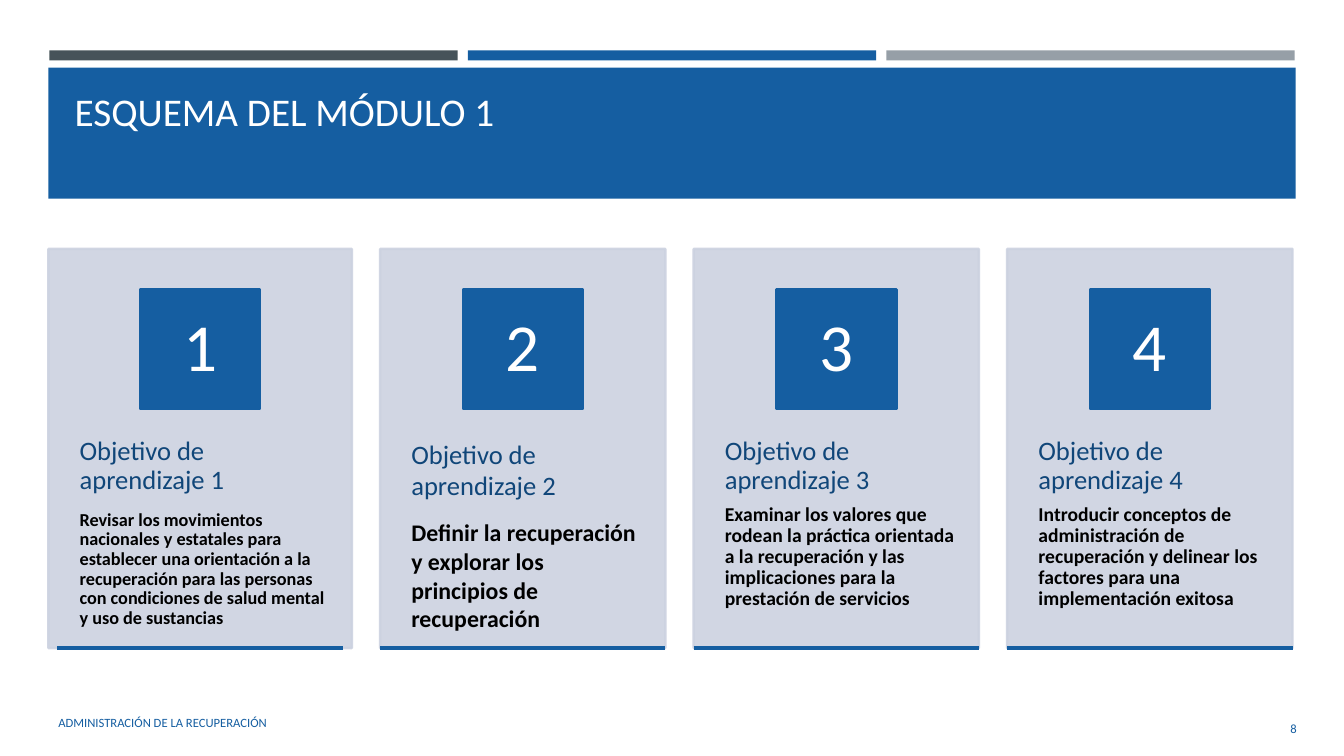
from lxml import etree
from pptx import Presentation
from pptx.dml.color import RGBColor
from pptx.enum.shapes import MSO_CONNECTOR, MSO_SHAPE
from pptx.enum.text import MSO_ANCHOR, MSO_AUTO_SIZE, PP_ALIGN
from pptx.oxml.ns import qn
from pptx.util import Inches, Pt

RECT = MSO_SHAPE.RECTANGLE
STRAIGHT = MSO_CONNECTOR.STRAIGHT
TOP, MIDDLE = MSO_ANCHOR.TOP, MSO_ANCHOR.MIDDLE
LEFT, CENTER, RIGHT = PP_ALIGN.LEFT, PP_ALIGN.CENTER, PP_ALIGN.RIGHT
NO_FIT = MSO_AUTO_SIZE.NONE

BLUE = RGBColor(0x15, 0x5E, 0xA1)
NAVY = RGBColor(0x10, 0x46, 0x79)
SLATE = RGBColor(0x46, 0x53, 0x59)
GRAY = RGBColor(0x96, 0x9F, 0xA7)
PALE = RGBColor(0xCC, 0xD2, 0xE0)
WHITE = RGBColor(0xFF, 0xFF, 0xFF)
BLACK = RGBColor(0, 0, 0)

FONT = "Calibri"
BORDER = Pt(1.75)
CARD_TOP, CARD_HEIGHT = 2.47, 3.96
CARD_WIDTH, CARD_PITCH = 2.83, 3.11
BADGE_SIZE = 1.19

OBJECTIVES = [
    dict(goal="Revisar los movimientos nacionales y estatales para establecer "
              "una orientación a la recuperación para las personas con "
              "condiciones de salud mental y uso de sustancias",
         size=13, spacing=0.9, gap=11),
    dict(goal="Definir la recuperación y explorar los principios de "
              "recuperación",
         size=17, spacing=1.0, gap=12),
    dict(goal="Examinar los valores que rodean la práctica orientada a la "
              "recuperación y las implicaciones para la prestación de servicios",
         size=14, spacing=0.9, gap=6.7),
    dict(goal="Introducir conceptos de administración de recuperación y "
              "delinear los factores para una implementación exitosa",
         size=14, spacing=0.9, gap=6.7),
]


def write(paragraph, text, size, color, bold=False, align=LEFT, spacing=1.0,
          before=0):
    paragraph.alignment = align
    paragraph.line_spacing = spacing
    paragraph.space_before = Pt(before)
    paragraph.space_after = Pt(0)
    run = paragraph.add_run()
    run.text = text
    run.font.name = FONT
    run.font.size = Pt(size)
    run.font.bold = bold
    run.font.color.rgb = color


def set_frame(frame, anchor, margins=(0.1, 0.05, 0.1, 0.05)):
    frame.word_wrap = True
    frame.auto_size = NO_FIT
    frame.vertical_anchor = anchor
    (frame.margin_left, frame.margin_top,
     frame.margin_right, frame.margin_bottom) = map(Inches, margins)
    return frame


def add_frame(slide, box, anchor, **options):
    label = slide.shapes.add_textbox(*map(Inches, box))
    return set_frame(label.text_frame, anchor, **options)


def add_rect(slide, box, color, outlined=False):
    rect = slide.shapes.add_shape(RECT, *map(Inches, box))
    rect.shadow.inherit = False
    rect.fill.solid()
    rect.fill.fore_color.rgb = color
    if outlined:
        rect.line.color.rgb = color
        rect.line.width = BORDER
    else:
        rect.line.fill.background()
    return rect


def add_header(slide, left, top, width):
    bar_width, bar_pitch = 4.05, 4.15
    for index, color in enumerate((SLATE, BLUE, GRAY)):
        add_rect(slide, (left + 0.01 + index * bar_pitch, top, bar_width, 0.1),
                 color)
    add_rect(slide, (left, top + 0.17, width, 1.3), BLUE)

    title = slide.shapes.title
    title.left, title.top = Inches(left + 0.16), Inches(top + 0.27)
    title.width, title.height = Inches(width - 0.31), Inches(1.11)
    title.element.getparent().append(title.element)
    frame = set_frame(title.text_frame, TOP, margins=(0.1, 0.1, 0.1, 0.05))
    write(frame.paragraphs[0], "ESQUEMA DEL MÓDULO 1", 28, WHITE)


def add_card(slide, left, top, width, height, number, goal, size, spacing, gap):
    card = add_rect(slide, (left, top, width, height), PALE, outlined=True)
    for color in card.element.spPr.iter(qn("a:srgbClr")):
        etree.SubElement(color, qn("a:alpha"), val="90000")

    badge_left = left + (width - BADGE_SIZE) / 2
    badge = add_rect(slide, (badge_left, top + 0.4, BADGE_SIZE, BADGE_SIZE),
                     BLUE, outlined=True)
    frame = set_frame(badge.text_frame, MIDDLE, margins=(0.09, 0.01, 0.09, 0.01))
    write(frame.paragraphs[0], str(number), 48, WHITE, align=CENTER, spacing=0.9)

    frame = add_frame(slide, (left, top + 1.51, width, 2.38), TOP,
                      margins=(0.31, 0.36, 0.22, 0.36))
    write(frame.paragraphs[0], f"Objetivo de aprendizaje {number}", 19, NAVY,
          spacing=spacing)
    write(frame.add_paragraph(), goal, size, BLACK, bold=True, spacing=spacing,
          before=gap)

    rule_left = left + (width - CARD_WIDTH) / 2
    bottom = Inches(top + height)
    rule = slide.shapes.add_connector(STRAIGHT, Inches(rule_left), bottom,
                                      Inches(rule_left + CARD_WIDTH), bottom)
    rule.line.color.rgb = BLUE
    rule.line.width = Pt(2.5)
    etree.SubElement(rule.element.spPr, qn("a:effectLst"))


def add_cards(slide, first_left, next_left):
    for index, objective in enumerate(OBJECTIVES):
        if index == 0:
            left, width = first_left, 3.01
        else:
            left, width = next_left + (index - 1) * CARD_PITCH, CARD_WIDTH
        add_card(slide, left, CARD_TOP, width, CARD_HEIGHT, index + 1,
                 **objective)


def add_footer(slide, left, top):
    module = add_frame(slide, (left, top, 7.46, 0.4), MIDDLE)
    write(module.paragraphs[0], "ADMINISTRACIÓN DE LA RECUPERACIÓN", 9, BLUE)
    page = add_frame(slide, (left + 11.33, top + 0.06, 1.15, 0.4), MIDDLE)
    write(page.paragraphs[0], "8", 9, BLUE, align=RIGHT)


def main():
    deck = Presentation()
    deck.slide_width, deck.slide_height = Inches(13.33), Inches(7.5)
    slide = deck.slides.add_slide(deck.slide_layouts[5])
    add_header(slide, 0.48, 0.5, 12.37)
    add_cards(slide, 0.48, 3.77)
    add_footer(slide, 0.48, 6.97)
    deck.save("out.pptx")


if __name__ == "__main__":
    main()
